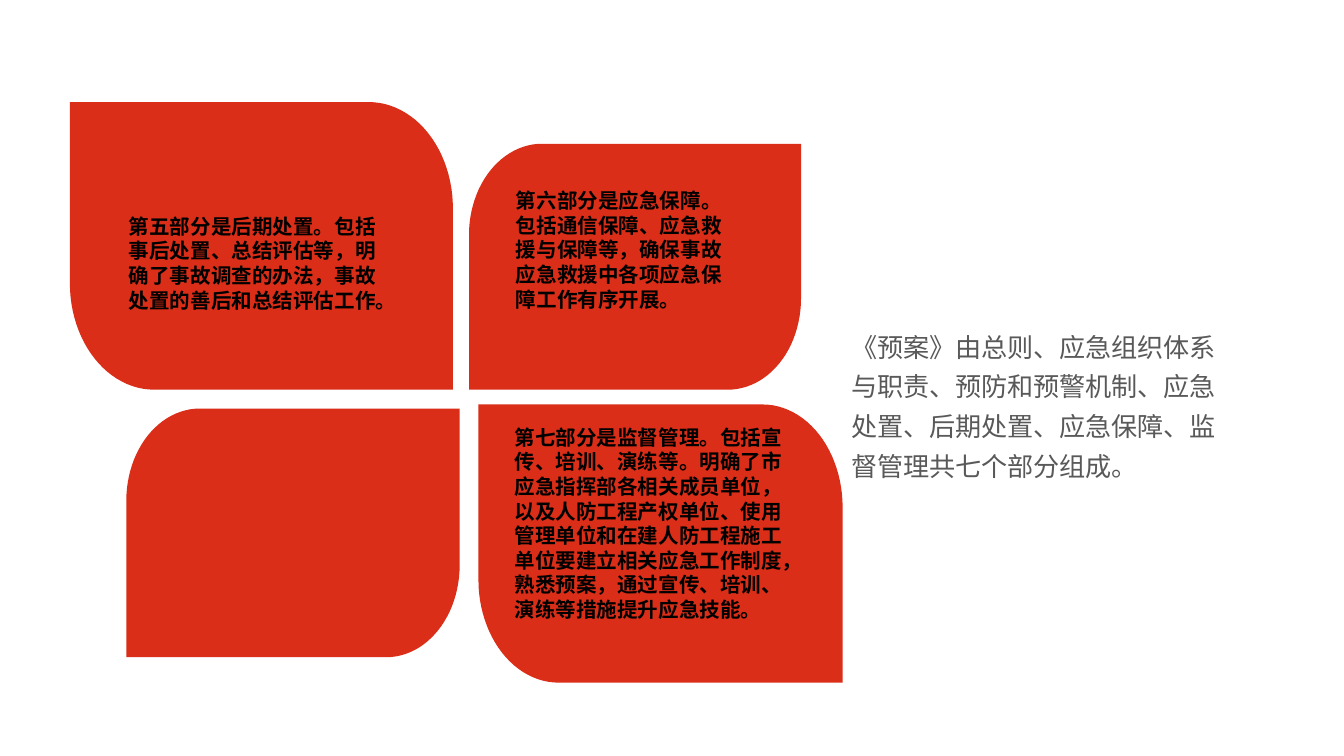
import dataclasses
import math

import pptx
import pptx.dml.color
import pptx.oxml.ns
import pptx.util
from lxml import etree

Inches = pptx.util.Inches


@dataclasses.dataclass(frozen=True)
class Theme:
    font: str = "Noto Sans CJK SC"
    petal: str = "DA2E18"
    petal_text: str = "000000"
    summary_text: str = "595959"
    petal_size: int = 11
    summary_size: int = 14


THEME = Theme()
PAGE_WIDTH = 10
PAGE_HEIGHT = PAGE_WIDTH * 9 / 16
CORNER_X, CORNER_Y = 0.22, 0.37  # corner radii as shares of width and height
ARC_STEPS = 24

# Petal box, whether the top right corner is round, text box inside it, text
PETALS = [
    ((0.94, 3.04, 2.48, 1.85), False, None, None),
    ((0.52, 0.76, 2.85, 2.14), True, (0.34, 0.78, 2.16, 0.84),
     "第五部分是后期处置。包括事后处置、总结评估等，明确了事故调查的办法，"
     "事故处置的善后和总结评估工作。"),
    ((3.56, 3.01, 2.71, 2.07), True, (0.17, 0.1, 2.24, 1.66),
     "第七部分是监督管理。包括宣传、培训、演练等。明确了市应急指挥部各相关成员单位，"
     "以及人防工程产权单位、使用管理单位和在建人防工程施工单位要建立相关应急工作制度，"
     "熟悉预案，通过宣传、培训、演练等措施提升应急技能。"),
    ((3.49, 1.07, 2.47, 1.83), False, (0.25, 0.28, 1.82, 1.28),
     "第六部分是应急保障。包括通信保障、应急救援与保障等，"
     "确保事故应急救援中各项应急保障工作有序开展。"),
]
SUMMARY = ("《预案》由总则、应急组织体系与职责、预防和预警机制、应急处置、"
           "后期处置、应急保障、监督管理共七个部分组成。")


def add_text(page, box, text, *, size, color, bold=False, line_spacing=None, tracking=None):
    """Tracking is in hundredths of a point."""
    frame = page.shapes.add_textbox(*map(Inches, box)).text_frame
    frame.word_wrap = True
    para = frame.paragraphs[0]
    if line_spacing:
        para.line_spacing = line_spacing
    span = para.add_run()
    span.text = text
    span.font.name = THEME.font
    span.font.size = pptx.util.Pt(size)
    span.font.bold = bold
    span.font.color.rgb = pptx.dml.color.RGBColor.from_string(color)
    properties = span.font._element
    etree.SubElement(properties, pptx.oxml.ns.qn("a:ea"), typeface=THEME.font)
    if tracking is not None:
        properties.set("spc", str(tracking))


def petal_points(box, round_top_right):
    """Outline with two opposite round corners; the other pair is its mirror."""
    left, top, width, height = box
    radius_x, radius_y = width * CORNER_X, height * CORNER_Y
    arc = [math.pi / 2 * step / ARC_STEPS for step in range(ARC_STEPS + 1)]
    top_right = [(width - radius_x + radius_x * math.sin(angle),
                  radius_y - radius_y * math.cos(angle)) for angle in arc]
    bottom_left = [(width - x, height - y) for x, y in top_right]
    points = [(0, 0), *top_right, (width, height), *bottom_left]
    if not round_top_right:
        points = [(width - x, y) for x, y in points]
    return [(Inches(left + x), Inches(top + y)) for x, y in points]


def add_petal(page, box, round_top_right, text_box, text):
    start, *others = petal_points(box, round_top_right)
    builder = page.shapes.build_freeform(*start)
    builder.add_line_segments(others, close=True)
    petal = builder.convert_to_shape()
    petal.shadow.inherit = False
    petal.fill.solid()
    petal.fill.fore_color.rgb = pptx.dml.color.RGBColor.from_string(THEME.petal)
    petal.line.fill.background()
    if text:
        x, y, width, height = text_box
        add_text(page, (box[0] + x, box[1] + y, width, height), text,
                 size=THEME.petal_size, color=THEME.petal_text, bold=True)


def add_summary(page, box):
    add_text(page, box, SUMMARY, size=THEME.summary_size, color=THEME.summary_text,
             line_spacing=1.27, tracking=-10)


def main():
    deck = pptx.Presentation()
    deck.slide_width, deck.slide_height = Inches(PAGE_WIDTH), Inches(PAGE_HEIGHT)
    page = deck.slides.add_slide(deck.slide_layouts[6])
    add_summary(page, (6.24, 2.35, 3.06, 1.32))
    for petal in PETALS:
        add_petal(page, *petal)
    deck.save("out.pptx")


if __name__ == "__main__":
    main()
